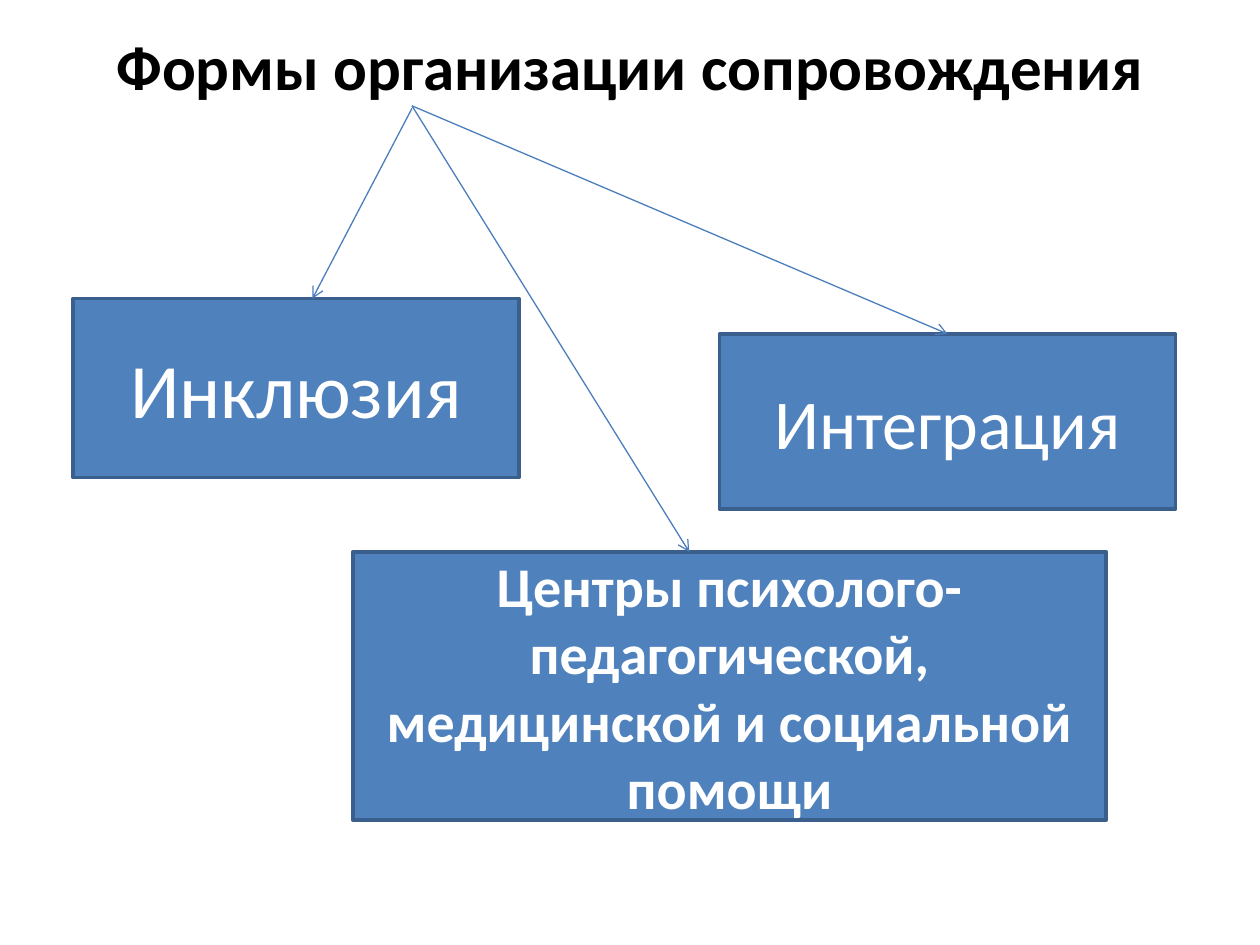
import pptx
import pptx.util
import pptx.dml.color
import pptx.enum.shapes
import pptx.enum.text
from lxml import etree
from pptx.oxml.ns import qn

Inches, Pt = pptx.util.Inches, pptx.util.Pt
RGBColor = pptx.dml.color.RGBColor
SHAPE = pptx.enum.shapes.MSO_SHAPE.RECTANGLE
STRAIGHT = pptx.enum.shapes.MSO_CONNECTOR.STRAIGHT

BLACK = RGBColor(0x00, 0x00, 0x00)
WHITE = RGBColor(0xFF, 0xFF, 0xFF)
BLUE = RGBColor(0x4F, 0x81, 0xBD)
BORDER = RGBColor(0x3A, 0x5F, 0x8C)
ARROW = RGBColor(0x4B, 0x7E, 0xBC)

# Content
WIDTH, HEIGHT = 10, 7.5
TITLE = "Формы организации сопровождения"
TITLE_AREA = (0.5, 0.17, WIDTH - 2 * 0.5, 0.69)
ARROW_START_X = 3.27
# text, (left, top, width, height), size, bold, arrow start y, arrow end x
FORMS = [
    ("Центры психолого-педагогической, медицинской и социальной помощи",
     (2.8, 4.38, 5.98, 2.13), 32, True, 0.84, 5.47),
    ("Инклюзия", (0.58, 2.37, 3.54, 1.42), 44, False, 0.86, 2.48),
    ("Интеграция", (5.71, 2.65, 3.62, 1.39), 40, False, 0.84, 7.52),
]


def write(box, text, size, bold, color):
    frame = box.text_frame
    frame.word_wrap = True
    frame.vertical_anchor = pptx.enum.text.MSO_ANCHOR.MIDDLE
    para = frame.paragraphs[0]
    para.alignment = pptx.enum.text.PP_ALIGN.CENTER
    span = para.add_run()
    span.text = text
    span.font.name = "Calibri"
    span.font.size = Pt(size)
    span.font.bold = bold
    span.font.color.rgb = color


def add_form(page, area, text, size, bold):
    box = page.shapes.add_shape(SHAPE, *map(Inches, area))
    box.shadow.inherit = False
    box.fill.solid()
    box.fill.fore_color.rgb = BLUE
    box.line.color.rgb = BORDER
    box.line.width = Pt(2)
    write(box, text, size, bold, WHITE)


def add_arrow(page, *ends):
    arrow = page.shapes.add_connector(STRAIGHT, *map(Inches, ends))
    arrow.line.color.rgb = ARROW
    arrow.line.width = Pt(0.75)
    etree.SubElement(arrow.line._get_or_add_ln(), qn("a:tailEnd"), type="arrow")
    etree.SubElement(arrow._element.spPr, qn("a:effectLst"))


def main():
    deck = pptx.Presentation()
    deck.slide_width, deck.slide_height = Inches(WIDTH), Inches(HEIGHT)
    page = deck.slides.add_slide(deck.slide_layouts[6])

    # Title
    title = page.shapes.add_textbox(*map(Inches, TITLE_AREA))
    write(title, TITLE, 36, True, BLACK)

    # Boxes, each with an arrow from the title to its top edge
    for text, area, size, bold, _, _ in FORMS:
        add_form(page, area, text, size, bold)
    for _, area, _, _, start_y, end_x in FORMS:
        add_arrow(page, ARROW_START_X, start_y, end_x, area[1])

    deck.save("out.pptx")


if __name__ == "__main__":
    main()
